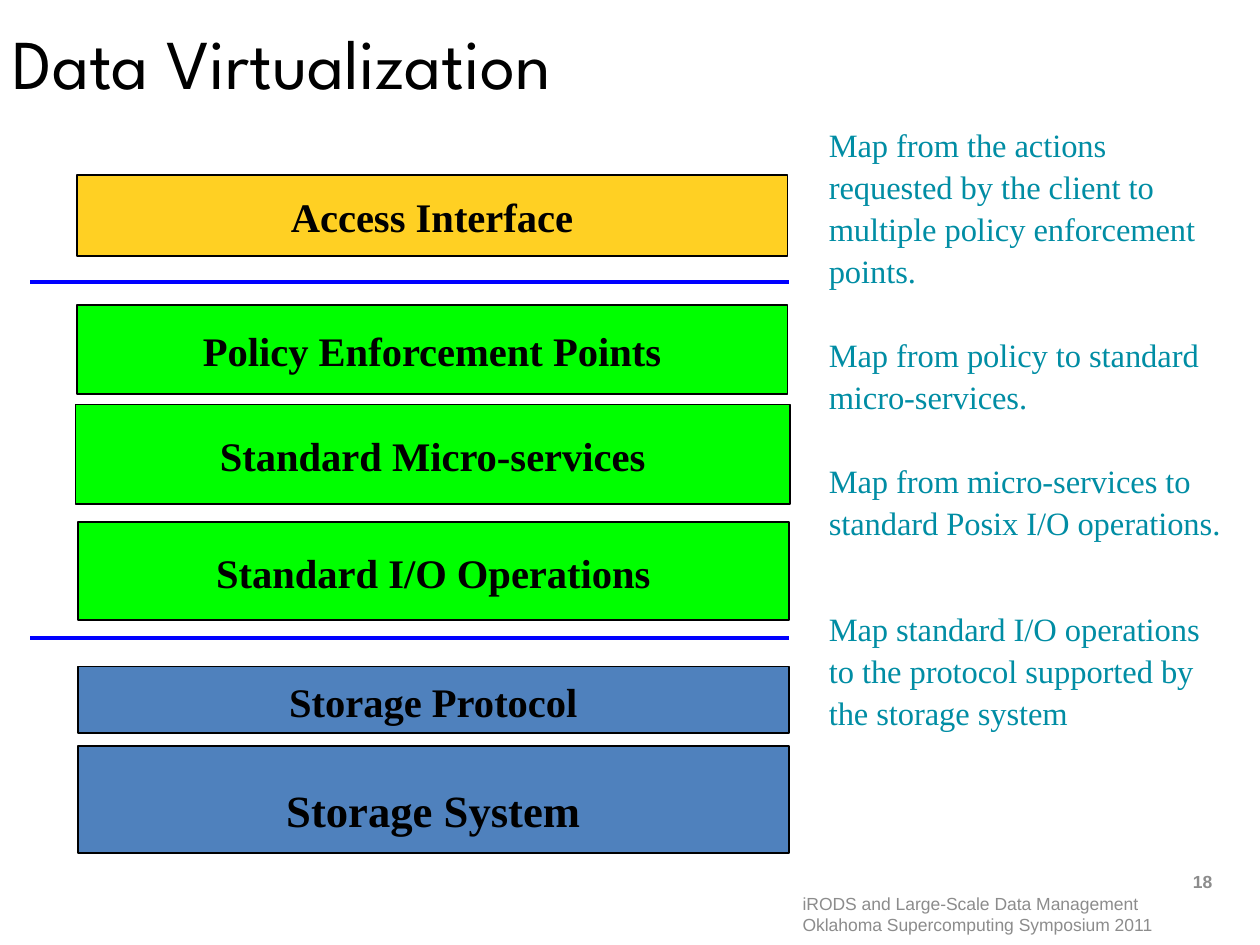
"""Build the Data Virtualization slide: a stack of layers with notes beside it."""
from lxml import etree
from pptx import Presentation
from pptx.dml.color import RGBColor
from pptx.enum.shapes import MSO_CONNECTOR, MSO_SHAPE
from pptx.enum.text import MSO_ANCHOR, PP_ALIGN
from pptx.oxml.ns import qn
from pptx.util import Inches, Pt

LEFT, CENTER, RIGHT = PP_ALIGN.LEFT, PP_ALIGN.CENTER, PP_ALIGN.RIGHT
TOP, MIDDLE = MSO_ANCHOR.TOP, MSO_ANCHOR.MIDDLE
RECT, LINE = MSO_SHAPE.RECTANGLE, MSO_CONNECTOR.STRAIGHT
SERIF = "Times New Roman"
COLORS = {
    "black": "000000",
    "gold": "FFD023",
    "green": "00FF00",
    "steel": "4F81BD",
    "blue": "0000FF",
    "teal": "008DA4",
    "gray": "8C8C8C",
}


def rgb(name):
    return RGBColor.from_string(COLORS[name])


def write(shape, lines, size, font=SERIF, color="black", bold=False, align=LEFT,
          anchor=MIDDLE, wrap=True, raised=False, pitch=None, gaps=()):
    frame = shape.text_frame
    frame.word_wrap = wrap
    frame.vertical_anchor = anchor
    for i, text in enumerate(lines):
        para = frame.paragraphs[0] if i == 0 else frame.add_paragraph()
        para.alignment = align
        if pitch:
            para.line_spacing = Pt(pitch)
        if i and gaps:
            para.space_before = Pt(gaps[i - 1])
        run = para.add_run()
        run.text = text
        run.font.name = font
        run.font.size = Pt(size)
        run.font.bold = bold
        run.font.color.rgb = rgb(color)
        if raised:
            run.font._element.set("baseline", "4000")
    return frame


deck = Presentation()
deck.slide_width, deck.slide_height = Inches(10), Inches(7.5)
slide = deck.slides.add_slide(deck.slide_layouts[5])
shapes = slide.shapes

title = shapes.title
title.left, title.top = Inches(0), Inches(0)
title.width, title.height = Inches(7.88), Inches(0.97)
write(title, ["Data Virtualization"], 40, font="League Spartan")

layers = [
    ("Access Interface", "gold", 0.61, 1.39, 5.64, 0.64, 40, 0.18),
    ("Policy Enforcement Points", "green", 0.61, 2.42, 5.64, 0.71, 40, 0.18),
    ("Standard Micro-services", "green", 0.6, 3.21, 5.67, 0.79, 40, 0.18),
    ("Standard I/O Operations", "green", 0.62, 4.14, 5.64, 0.78, 40, 0.17),
    ("Storage Protocol", "steel", 0.62, 5.29, 5.64, 0.53, 40, 0.17),
    ("Storage System", "steel", 0.62, 5.92, 5.64, 0.85, 44, 0.05),
]
for text, fill, x, y, w, h, size, pad in layers:
    layer = shapes.add_shape(RECT, Inches(x), Inches(y), Inches(w), Inches(h))
    layer.shadow.inherit = False
    layer.fill.solid()
    layer.fill.fore_color.rgb = rgb(fill)
    layer.line.color.rgb = rgb("black")
    layer.line.width = Pt(1)
    frame = write(layer, [text], size, bold=True, align=CENTER, wrap=False, raised=True)
    frame.margin_bottom = Inches(pad)

for y in (2.24, 5.06):
    rule = shapes.add_connector(LINE, Inches(0.24), Inches(y), Inches(6.26), Inches(y))
    rule.line.color.rgb = rgb("blue")
    rule.line.width = Pt(2.25)
    etree.SubElement(rule._element.spPr, qn("a:effectLst"))

notes = shapes.add_textbox(Inches(6.48), Inches(0.97), Inches(3.34), Inches(5.51))
write(notes, [
    "Map from the actions requested by the client to multiple policy enforcement points.",
    "Map from policy to standard micro-services.",
    "Map from micro-services to standard Posix I/O operations.",
    "Map standard I/O operations to the protocol supported by the storage system",
], 32, color="teal", anchor=TOP, raised=True, pitch=24, gaps=(24, 24, 37))

footer = shapes.add_textbox(Inches(6.07), Inches(6.92), Inches(3.17), Inches(0.67))
frame = write(footer, [
    "iRODS and Large-Scale Data Management",
    "Oklahoma Supercomputing Symposium 2011",
], 10, font="Arial", color="gray")
frame.margin_left, frame.margin_right = Inches(0.3), Inches(0)

number = shapes.add_textbox(Inches(9.26), Inches(6.8), Inches(0.46), Inches(0.4))
write(number, ["18"], 10, font="Arial", color="gray", bold=True, align=RIGHT)

deck.save("out.pptx")
